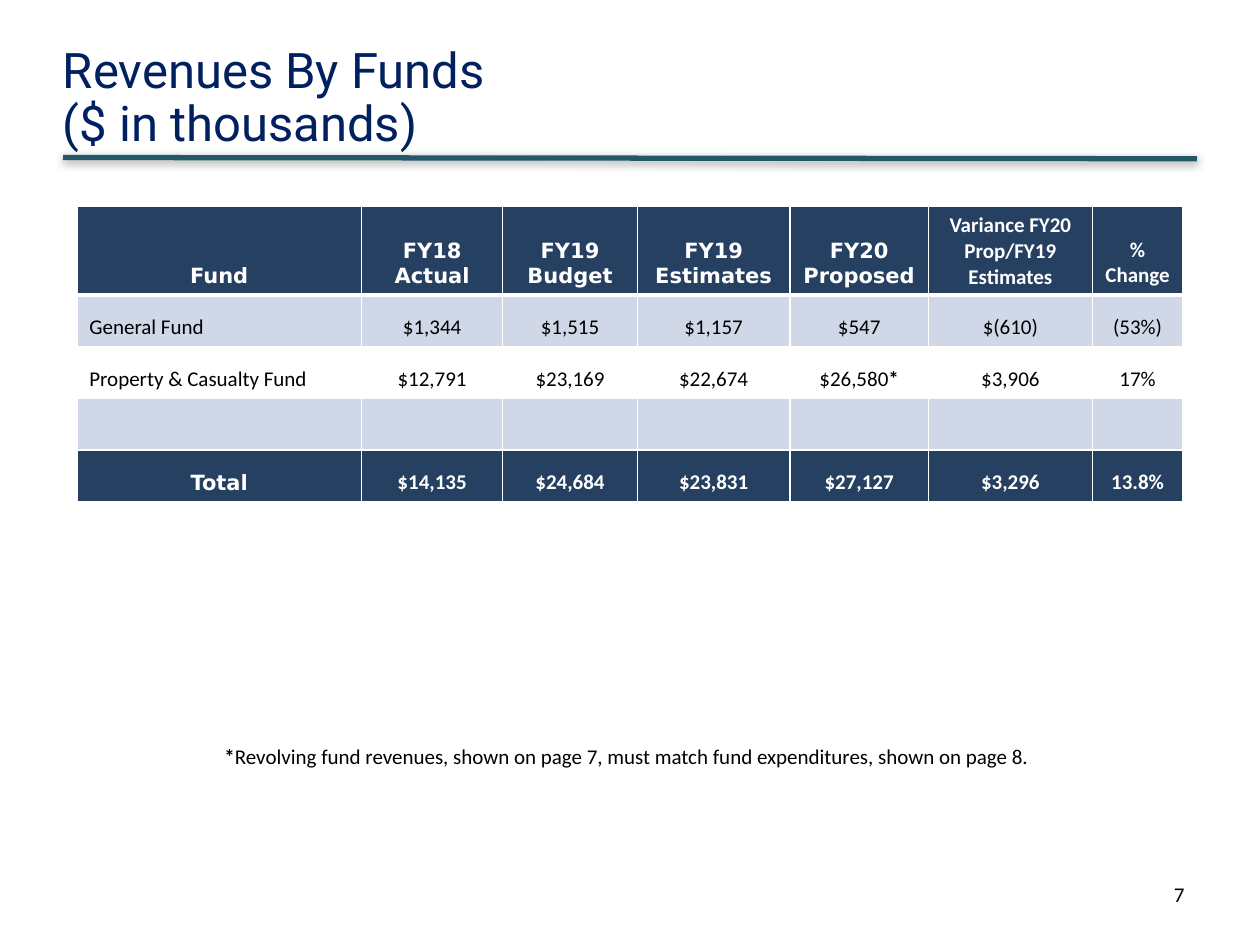
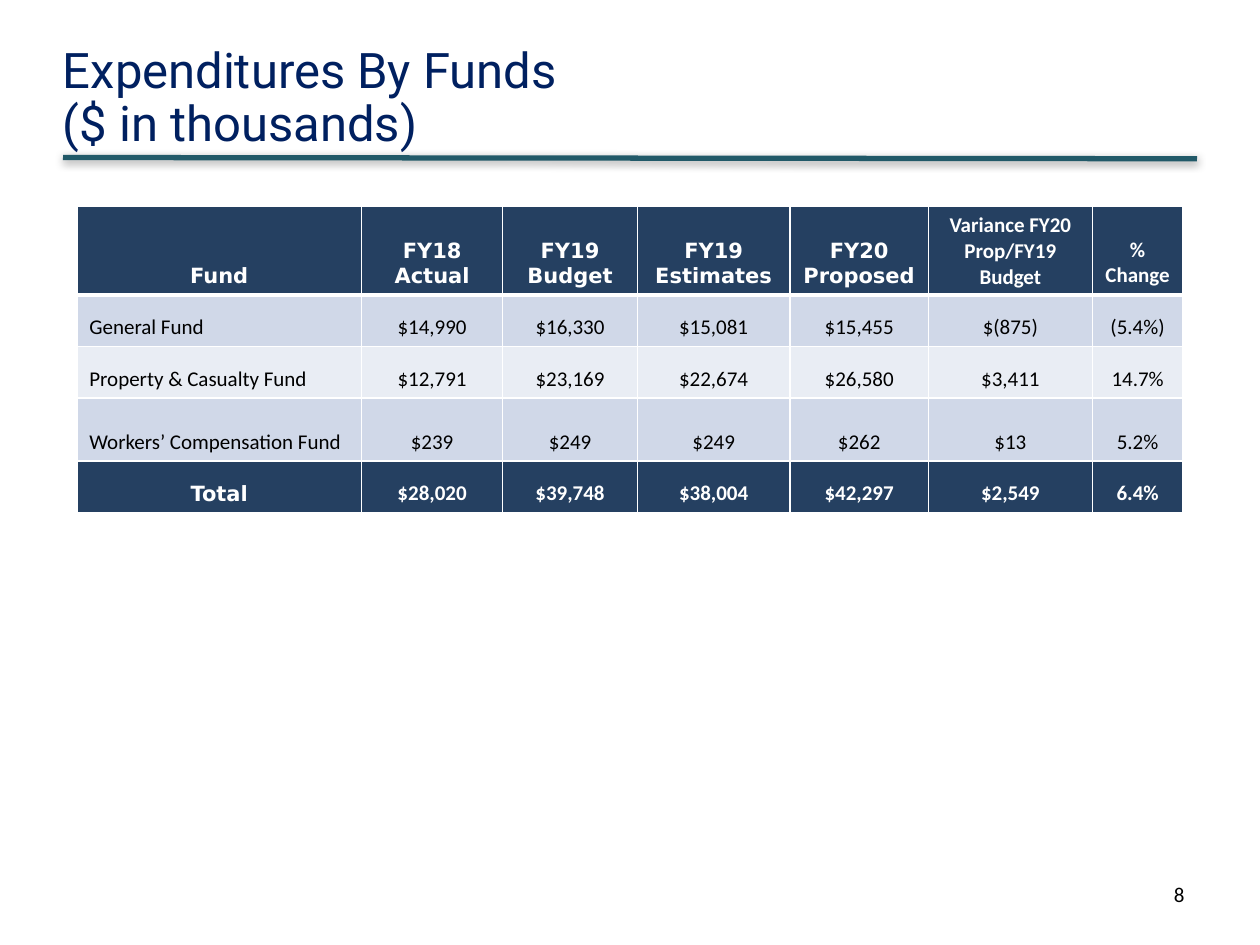
"""Build the revenue and expenditure slides of a budget presentation."""
from dataclasses import dataclass

import lxml.etree
import pptx
import pptx.dml.color
import pptx.enum.shapes
import pptx.enum.text
import pptx.oxml.ns
import pptx.util

Inches = pptx.util.Inches
Pt = pptx.util.Pt
Align = pptx.enum.text.PP_ALIGN
Anchor = pptx.enum.text.MSO_ANCHOR


@dataclass(frozen=True)
class Theme:
    title_font: str = "Roboto"
    label_font: str = "DejaVu Sans"
    body_font: str = "Calibri"
    title_color: str = "002060"
    rule_color: str = "215968"
    header_fill: str = "254061"
    band_fill: str = "D0D8E8"
    light_fill: str = "E9EDF4"
    white: str = "FFFFFF"
    black: str = "000000"
    title_size: int = 28
    body_size: int = 12
    thin_border: int = 1
    thick_border: int = 3


THEME = Theme()
COLUMN_WIDTHS = (2.26, 1.12, 1.07, 1.21, 1.1, 1.3, 0.72)
HEADER_HEIGHT = 0.7
ROW_HEIGHT = 0.41


@dataclass(frozen=True)
class FundRow:
    cells: tuple[str, ...]
    fill: str
    height: float = ROW_HEIGHT


@dataclass(frozen=True)
class FundPage:
    title: str
    number: int
    variance_base: str
    funds: tuple[FundRow, ...]
    totals: tuple[str, ...]
    footnote: str = ""


PAGES = (
    FundPage(
        "Revenues By Funds", 7, "Estimates",
        (
            FundRow(("General Fund", "$1,344", "$1,515", "$1,157", "$547", "$(610)", "(53%)"),
                    THEME.band_fill),
            FundRow(("Property & Casualty Fund", "$12,791", "$23,169", "$22,674", "$26,580*",
                     "$3,906", "17%"), THEME.white),
            FundRow(("",) * len(COLUMN_WIDTHS), THEME.band_fill),
        ),
        ("$14,135", "$24,684", "$23,831", "$27,127", "$3,296", "13.8%"),
        "*Revolving fund revenues, shown on page 7, must match fund expenditures, shown on page 8.",
    ),
    FundPage(
        "Expenditures By Funds", 8, "Budget",
        (
            FundRow(("General Fund", "$14,990", "$16,330", "$15,081", "$15,455", "$(875)",
                     "(5.4%)"), THEME.band_fill),
            FundRow(("Property & Casualty Fund", "$12,791", "$23,169", "$22,674", "$26,580",
                     "$3,411", "14.7%"), THEME.light_fill),
            FundRow(("Workers’ Compensation Fund", "$239", "$249", "$249", "$262", "$13",
                     "5.2%"), THEME.band_fill, 0.5),
        ),
        ("$28,020", "$39,748", "$38,004", "$42,297", "$2,549", "6.4%"),
    ),
)


def rgb(color: str) -> pptx.dml.color.RGBColor:
    return pptx.dml.color.RGBColor.from_string(color)


def add_element(parent, tag: str, **attributes):
    return lxml.etree.SubElement(
        parent, pptx.oxml.ns.qn(tag), {name: str(value) for name, value in attributes.items()})


def write_text(frame, text: str, *, size: int = THEME.body_size, font: str = THEME.body_font,
               color: str = THEME.black, bold: bool = False, align=Align.LEFT,
               line_spacing: float | None = None) -> None:
    for index, line in enumerate(text.split("\n")):
        para = frame.add_paragraph() if index else frame.paragraphs[0]
        para.alignment = align
        para.line_spacing = line_spacing
        for part_index, part in enumerate(line.split("\v")):
            if part_index:
                para.add_line_break()
            for piece in filter(None, part.partition("*")):
                span = para.add_run()
                span.text = piece
                span.font.size = Pt(size)
                span.font.name = font
                span.font.bold = bold or piece == "*"
                span.font.color.rgb = rgb(color)


def add_text_box(page, left: float, top: float, width: float, height: float, text: str, *,
                 anchor=Anchor.TOP, inset: float | None = None, **text_format) -> None:
    box = page.shapes.add_textbox(Inches(left), Inches(top), Inches(width), Inches(height))
    frame = box.text_frame
    frame.word_wrap = True
    frame.vertical_anchor = anchor
    if inset is not None:
        frame.margin_left = frame.margin_right = Inches(inset)
        frame.margin_top = frame.margin_bottom = Inches(inset)
    write_text(frame, text, **text_format)


def add_title_rule(page) -> None:
    rule = page.shapes.add_connector(
        pptx.enum.shapes.MSO_CONNECTOR.STRAIGHT,
        Inches(0.5), Inches(1.25), Inches(9.5), Inches(1.26))
    rule.line.color.rgb = rgb(THEME.rule_color)
    rule.line.width = Pt(3)
    effects = add_element(rule._element.spPr, "a:effectLst")
    shadow = add_element(effects, "a:outerShdw", blurRad=Pt(5), dist=Pt(1.6),
                         dir=90 * 60000, rotWithShape=0)
    color = add_element(shadow, "a:srgbClr", val=THEME.black)
    add_element(color, "a:alpha", val=38000)


def set_borders(cell, top: int, bottom: int) -> None:
    properties = cell._tc.get_or_add_tcPr()
    widths = {"a:lnL": THEME.thin_border, "a:lnR": THEME.thin_border,
              "a:lnT": top, "a:lnB": bottom}
    for tag, width in widths.items():
        line = add_element(properties, tag, w=Pt(width))
        add_element(add_element(line, "a:solidFill"), "a:srgbClr", val=THEME.white)


def cell_format(row: int, column: int, last_row: int) -> dict:
    strong = row in (0, last_row)
    label = (row == 0 and column < 5) or (row == last_row and column == 0)
    return {
        "font": THEME.label_font if label else THEME.body_font,
        "color": THEME.white if strong else THEME.black,
        "bold": strong,
        "align": Align.CENTER if strong or column else Align.LEFT,
    }


def add_fund_table(page, content: FundPage) -> None:
    header = ("Fund", "FY18\nActual", "FY19\nBudget", "FY19\nEstimates", "FY20\nProposed",
              f"Variance FY20 Prop/FY19 {content.variance_base}", "%\nChange")
    rows = (FundRow(header, THEME.header_fill, HEADER_HEIGHT), *content.funds,
            FundRow(("Total", *content.totals), THEME.header_fill))
    table = page.shapes.add_table(
        len(rows), len(COLUMN_WIDTHS), Inches(0.61), Inches(1.64),
        Inches(sum(COLUMN_WIDTHS)), Inches(sum(row.height for row in rows))).table
    table.first_row = table.horz_banding = False
    for column, width in zip(table.columns, COLUMN_WIDTHS):
        column.width = Inches(width)
    for row_index, row in enumerate(rows):
        table.rows[row_index].height = Inches(row.height)
        top = THEME.thick_border if row_index == 1 else THEME.thin_border
        bottom = THEME.thick_border if row_index == 0 else THEME.thin_border
        for column_index, text in enumerate(row.cells):
            cell = table.cell(row_index, column_index)
            set_borders(cell, top, bottom)
            cell.fill.solid()
            cell.fill.fore_color.rgb = rgb(row.fill)
            cell.vertical_anchor = Anchor.BOTTOM
            write_text(cell.text_frame, text,
                       **cell_format(row_index, column_index, len(rows) - 1))


def add_fund_page(deck, content: FundPage) -> None:
    page = deck.slides.add_slide(deck.slide_layouts[6])
    add_title_rule(page)
    add_text_box(page, 0.5, 0.33, 6.86, 0.92, f"{content.title}\v($ in thousands)",
                 anchor=Anchor.MIDDLE, inset=0, size=THEME.title_size, font=THEME.title_font,
                 color=THEME.title_color, line_spacing=0.9)
    add_text_box(page, 7.17, 6.95, 2.33, 0.4, str(content.number), align=Align.RIGHT)
    add_fund_table(page, content)
    if content.footnote:
        add_text_box(page, 1.54, 5.39, 6.87, 1.23, content.footnote,
                     anchor=Anchor.MIDDLE, align=Align.CENTER)


def main() -> None:
    deck = pptx.Presentation()
    deck.slide_width = Inches(10)
    deck.slide_height = Inches(7.5)
    for content in PAGES:
        add_fund_page(deck, content)
    deck.save("out.pptx")


if __name__ == "__main__":
    main()
